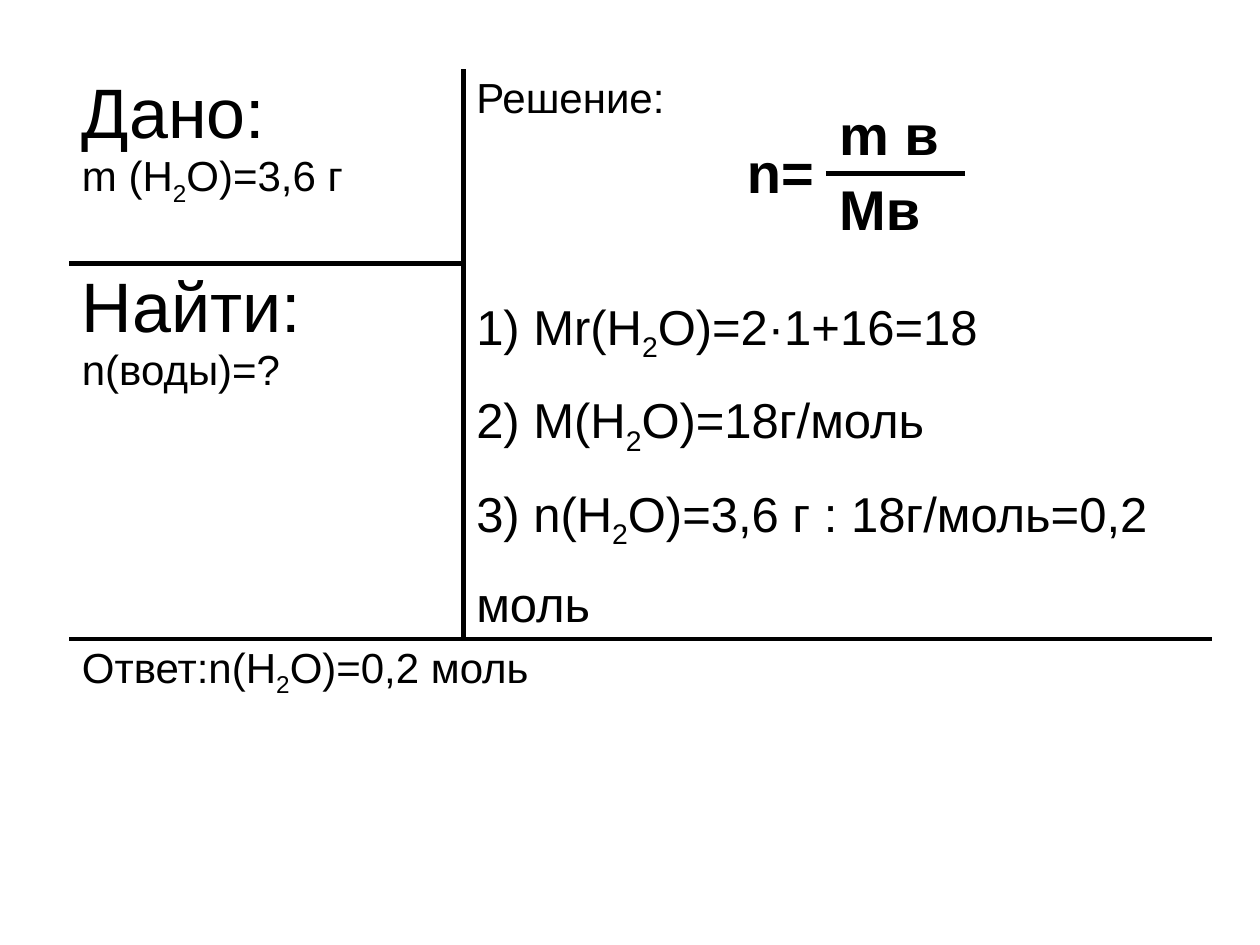
from dataclasses import dataclass

from lxml.etree import SubElement
from pptx import Presentation
from pptx.dml.color import RGBColor
from pptx.enum.text import MSO_ANCHOR as Anchor, PP_ALIGN as Align
from pptx.oxml.ns import qn
from pptx.table import Table, _Cell as Cell
from pptx.util import Inches, Pt

COLORS = {"ink": "000000", "paper": "FFFFFF"}
FONT = "Arial"
PLAIN_STYLE = "{2D5ABB26-0587-4C30-8999-92F81FD0307C}"
SIDES = "LRTB"


@dataclass
class Piece:
    text: str
    size: int
    bold: bool = False
    subscript: bool = False


@dataclass
class Entry:
    """One cell: its paragraphs and its borders, as side: (colour, points)."""
    row: int
    column: int
    paras: list[list[Piece]]
    borders: dict[str, tuple[str, int]]
    spacing: float | None = None
    align: Align = Align.LEFT
    anchor: Anchor = Anchor.TOP


def water(before: str, after: str, size: int) -> list[Piece]:
    """A line holding the formula H2O with its index lowered."""
    return [Piece(f"{before}(H", size), Piece("2", size, subscript=True),
            Piece(f"O){after}", size)]


def draw_borders(cell: Cell, borders: dict[str, tuple[str, int]]) -> None:
    properties = cell._tc.get_or_add_tcPr()
    for side in SIDES:
        if side in borders:
            color, width = borders[side]
            line = SubElement(properties, qn(f"a:ln{side}"), w=str(Pt(width)))
            fill = SubElement(line, qn("a:solidFill"))
            SubElement(fill, qn("a:srgbClr"), val=COLORS[color])


def write_cell(table: Table, entry: Entry) -> None:
    cell = table.cell(entry.row, entry.column)
    draw_borders(cell, entry.borders)
    cell.fill.background()
    cell.vertical_anchor = entry.anchor
    frame = cell.text_frame
    for index, pieces in enumerate(entry.paras):
        para = frame.add_paragraph() if index else frame.paragraphs[0]
        para.alignment = entry.align
        if entry.spacing:
            para.line_spacing = entry.spacing
        for piece in pieces:
            run = para.add_run()
            run.text = piece.text
            font = run.font
            font.name, font.size, font.bold = FONT, Pt(piece.size), piece.bold
            font.color.rgb = RGBColor.from_string(COLORS["ink"])
            if piece.subscript:
                run._r.get_or_add_rPr().set("baseline", "-25000")


def add_grid(slide, left: float, top: float, height: float, columns: list[float],
             rows: list[float], merge: tuple[int, int, int, int],
             entries: list[Entry]) -> None:
    """Add a plain table; merge gives the first and last row and column."""
    holder = slide.shapes.add_table(
        len(rows), len(columns), Inches(left), Inches(top),
        Inches(sum(columns)), Inches(height))
    table = holder.table
    table.first_row = table.horz_banding = False
    table._tbl.tblPr.find(qn("a:tableStyleId")).text = PLAIN_STYLE
    for column, width in zip(table.columns, columns):
        column.width = Inches(width)
    for row, row_height in zip(table.rows, rows):
        row.height = Inches(row_height)
    holder.height = Inches(height)  # the rows grow to fit their text
    first_row, first_column, last_row, last_column = merge
    table.cell(first_row, first_column).merge(table.cell(last_row, last_column))
    for entry in entries:
        write_cell(table, entry)


def main() -> None:
    deck = Presentation()
    deck.slide_width, deck.slide_height = Inches(10), Inches(7.5)
    slide = deck.slides.add_slide(deck.slide_layouts[6])

    rule = ("ink", 3)
    add_grid(slide, 0.55, 0.55, 5.97, [3.13, 5.94], [1.54] * 3, (2, 0, 2, 1), [
        Entry(0, 0, [[Piece("Дано:", 40)], water("m ", "=3,6 г", 24)],
              {"R": rule, "B": rule}),
        Entry(0, 1, [[Piece("Решение:", 24)]], {"L": rule}),
        Entry(1, 0, [[Piece("Найти: ", 40), Piece("n(воды)=?", 24)]],
              {"R": rule, "T": rule, "B": rule}),
        Entry(1, 1, [water("1) Mr", "=2·1+16=18", 28),
                     water("2) M", "=18г/моль", 28),
                     water("3) n", "=3,6 г : 18г/моль=0,2 моль", 28)],
              {"L": rule, "B": rule}, spacing=1.5),
        Entry(2, 0, [water("Ответ:n", "=0,2 моль", 24)], {"T": rule}),
    ])

    edges = {side: ("paper", 1) for side in SIDES}
    add_grid(slide, 5.47, 0.78, 1.27, [1.09] * 2, [0.59, 0.41], (0, 0, 1, 0), [
        Entry(0, 0, [[Piece("n=", 32, bold=True)]], edges | {"B": ("paper", 3)},
              align=Align.RIGHT, anchor=Anchor.MIDDLE),
        Entry(0, 1, [[Piece("m в", 32, bold=True)]], edges | {"B": rule}),
        Entry(1, 1, [[Piece("Мв", 32, bold=True)]], edges | {"T": rule}),
    ])

    deck.save("out.pptx")


if __name__ == "__main__":
    main()
